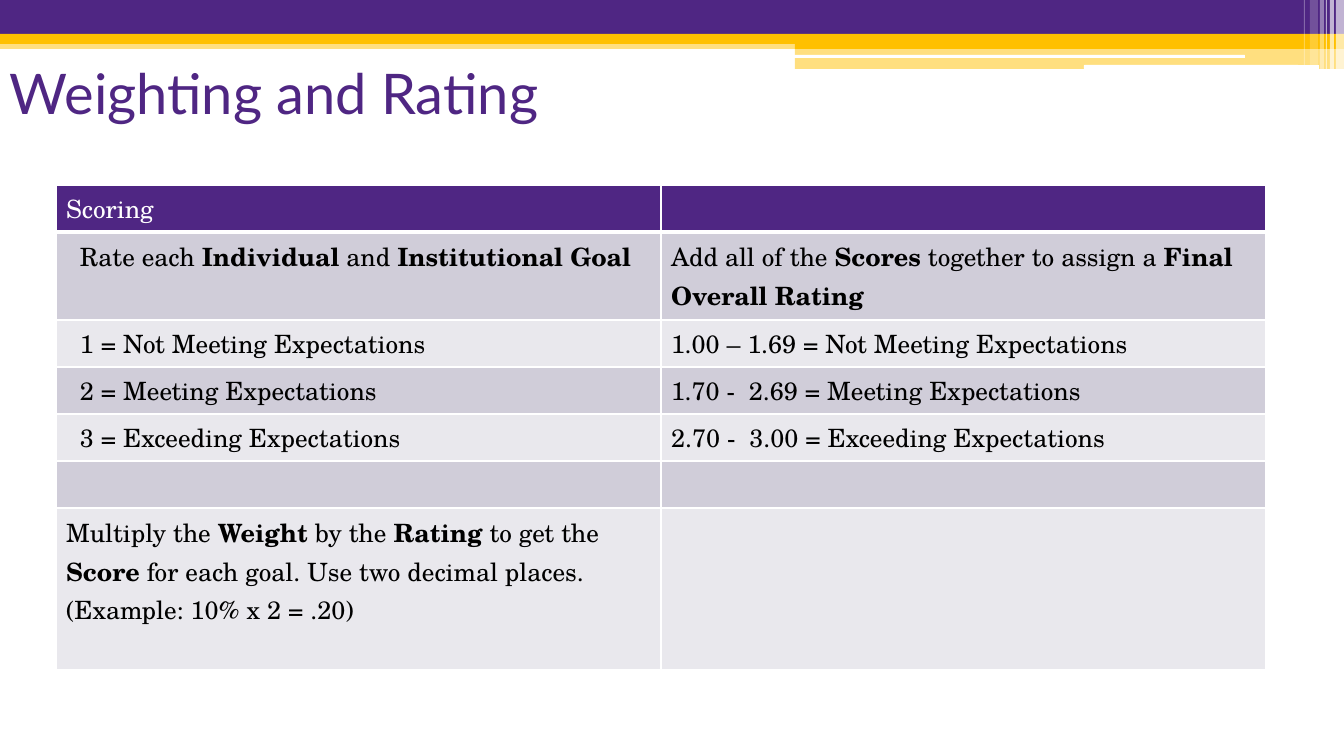
import pptx
import pptx.util
import pptx.dml.color
import pptx.enum.shapes
import pptx.enum.text
import pptx.oxml
import pptx.oxml.ns

PX = 12192000 / 1344  # EMU in one px
PURPLE, GOLD, WHITE, BLACK = "4F2683", "FFC000", "FFFFFF", "000000"
BANDS = ["D0CDD9", "E9E8ED"]
INDENT = 14

ROW_HEIGHTS = [47, 88, 47, 47, 47, 47, 162]
# ** switches bold on and off
SCORING = [
    ("Scoring", ""),
    ("Rate each **Individual** and **Institutional Goal**",
     "Add all of the **Scores** together to assign a **Final Overall Rating**"),
    ("1 = Not Meeting Expectations", "1.00 – 1.69 = Not Meeting Expectations"),
    ("2 = Meeting Expectations", "1.70 -  2.69 = Meeting Expectations"),
    ("3 = Exceeding Expectations", "2.70 -  3.00 = Exceeding Expectations"),
    ("", ""),
    ("Multiply the **Weight** by the **Rating** to get the **Score** for each goal. "
     "Use two decimal places.\v(Example: 10% x 2 = .20)", ""),
]


def px(n):
    return pptx.util.Emu(round(n * PX))


def rgb(color):
    return pptx.dml.color.RGBColor.from_string(color)


def write(tf, text, font, size, color):
    """Fill a text frame; ** toggles bold and \\v breaks the line."""
    tf.word_wrap = True
    p = tf.paragraphs[0]
    p.font.size = pptx.util.Pt(size)
    for i, part in enumerate(text.split("**")):
        for j, line in enumerate(part.split("\v")):
            if j:
                p.add_line_break()
            if line:
                r = p.add_run()
                r.text = line
                r.font.name = font
                r.font.size = pptx.util.Pt(size)
                r.font.bold = i % 2 == 1
                r.font.color.rgb = rgb(color)


def bar(slide, x, y, w, h, color, alpha=100, rounded=False):
    kinds = pptx.enum.shapes.MSO_SHAPE
    kind = kinds.ROUNDED_RECTANGLE if rounded else kinds.RECTANGLE
    sp = slide.shapes.add_shape(kind, px(x), px(y), px(w), px(h))
    sp.shadow.inherit = False
    sp.line.fill.background()
    sp.fill.solid()
    sp.fill.fore_color.rgb = rgb(color)
    if alpha < 100:
        clr = sp.fill._xPr.find(".//" + pptx.oxml.ns.qn("a:srgbClr"))
        clr.append(pptx.oxml.parse_xml(
            f'<a:alpha {pptx.oxml.ns.nsdecls("a")} val="{alpha * 1000}"/>'))
    return sp


def header_band(slide, x, y, w):
    # Full-width bands
    bar(slide, x, y + 40, w, 9, GOLD, 50)
    bar(slide, x, y, w, 34, PURPLE)
    bar(slide, x, y + 34, w, 10, GOLD)
    # Thicker gold on the right, cut by white lines
    bar(slide, x + 795, y + 39, w - 795, 10, GOLD)
    bar(slide, x + 795, y + 49, w - 795, 20, GOLD, 50)
    bar(slide, x + 794, y + 55, 451, 3, WHITE, rounded=True)
    bar(slide, x + 1084, y + 65, 235, 4, WHITE, rounded=True)
    # Translucent stripes: distance from right edge, width, height, opacity
    for right, width, height, alpha in [(8, 8, 69, 65), (14, 4, 69, 65), (18, 1, 69, 60),
                                        (24, 4, 69, 40), (34, 8, 65, 20), (40, 1, 65, 30)]:
        bar(slide, x + w - right, y, width, height, WHITE, alpha)


def title(slide, x, y, w, h, text):
    sp = slide.shapes.add_textbox(px(x), px(y), px(w), px(h))
    sp.text_frame.vertical_anchor = pptx.enum.text.MSO_ANCHOR.MIDDLE
    write(sp.text_frame, text, "Lato", 40, PURPLE)


def borders(cell, bottom):
    for side, width in [("L", 1), ("R", 1), ("T", 1), ("B", bottom)]:
        cell._tc.get_or_add_tcPr().append(pptx.oxml.parse_xml(
            f'<a:ln{side} {pptx.oxml.ns.nsdecls("a")} w="{width * 12700}">'
            f'<a:solidFill><a:srgbClr val="{WHITE}"/></a:solidFill></a:ln{side}>'))


def scoring_table(slide, x, y, w):
    frame = slide.shapes.add_table(len(SCORING), 2, px(x), px(y), px(w), px(sum(ROW_HEIGHTS)))
    table = frame.table
    table.first_row = table.horz_banding = False
    for col in table.columns:
        col.width = px(w / 2)
    for i, (row, height) in enumerate(zip(SCORING, ROW_HEIGHTS)):
        table.rows[i].height = px(height)
        for j, text in enumerate(row):
            cell = table.cell(i, j)
            borders(cell, 3 if i == 0 else 1)
            cell.fill.solid()
            cell.fill.fore_color.rgb = rgb(BANDS[(i - 1) % 2] if i else PURPLE)
            if j == 0 and 1 <= i <= 4:
                cell.margin_left = px(10 + INDENT)
            write(cell.text_frame, text, "TeX Gyre Schola", 18, BLACK if i else WHITE)


def main():
    prs = pptx.Presentation()
    prs.slide_width, prs.slide_height = px(1344), px(756)
    slide = prs.slides.add_slide(prs.slide_layouts[6])
    header_band(slide, 0, 0, 1344)
    title(slide, 0, 33, 1210, 118, "Weighting and Rating")
    scoring_table(slide, 56, 185, 1210)
    prs.save("out.pptx")


if __name__ == "__main__":
    main()
